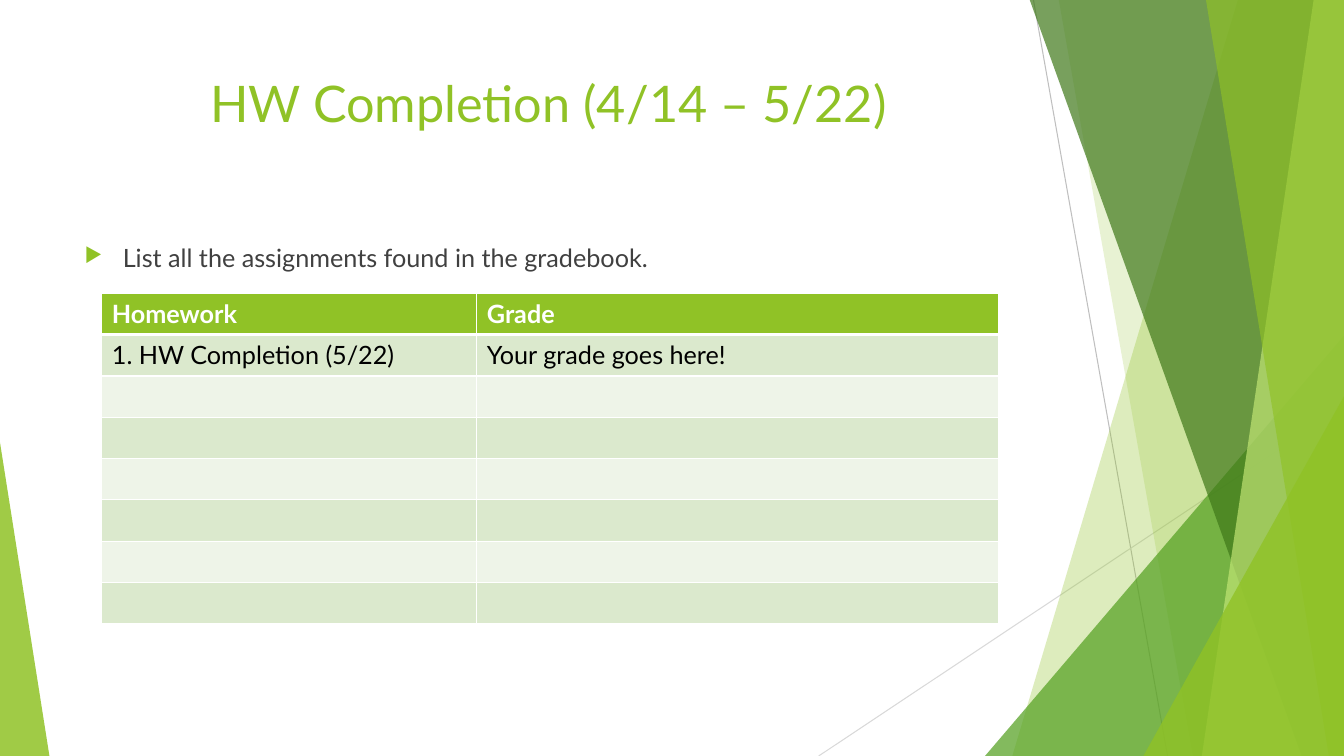
from dataclasses import dataclass

import lxml.etree
import pptx
import pptx.dml.color
import pptx.enum.shapes
import pptx.enum.text
import pptx.oxml.ns
import pptx.util

Inches = pptx.util.Inches
Pt = pptx.util.Pt
RGBColor = pptx.dml.color.RGBColor
qn = pptx.oxml.ns.qn

LIME = RGBColor(0x90, 0xC2, 0x26)
GREEN = RGBColor(0x54, 0xA0, 0x21)
FOREST = RGBColor(0x3F, 0x78, 0x19)
PALE = RGBColor(0xC0, 0xE4, 0x74)
SILVER = RGBColor(0xBF, 0xBF, 0xBF)
MIST = RGBColor(0xD9, 0xD9, 0xD9)
INK = RGBColor(0x40, 0x40, 0x40)
BLACK = RGBColor(0, 0, 0)
WHITE = RGBColor(0xFF, 0xFF, 0xFF)
BANDS = [RGBColor(0xEE, 0xF4, 0xE8), RGBColor(0xDB, 0xE9, 0xCD)]

WIDE, HIGH = 13.33, 7.5
FONT = "Lato"


@dataclass
class Line:
    x1: float
    y1: float
    x2: float
    y2: float
    color: RGBColor


@dataclass
class Shard:
    """A full-height blade from its slanted left edge to the slide's right edge."""
    top: float
    foot: float
    color: RGBColor
    alpha: int


@dataclass
class Wedge:
    """A right triangle standing on the slide's bottom edge."""
    left: float
    width: float
    height: float
    peak: float
    color: RGBColor
    alpha: int


LINES = [
    Line(10.25, 0, 11.58, HIGH, SILVER),
    Line(WIDE, 4.03, 8.12, HIGH, MIST),
]
FACETS = [
    Shard(12.28, 10.04, LIME, 30),
    Shard(10.5, 11.83, LIME, 20),
    Wedge(9.77, 3.56, 4.17, 1, GREEN, 72),
    Shard(10.21, 12.91, FOREST, 70),
    Shard(13.03, 11.92, PALE, 70),
    Shard(11.96, 13.18, LIME, 65),
    Wedge(11.34, 1.99, 3.57, 1, LIME, 80),
    Wedge(0, 0.49, 3.11, 0, LIME, 85),
]
HEAD = ["Homework", "Grade"]
FIRST = ["1. HW Completion (5/22)", "Your grade goes here!"]
ROWS = [HEAD, FIRST] + [["", ""]] * 6
COLS = [3.72, 5.17]
ROW = 0.41


def draw_line(slide, line: Line) -> None:
    link = slide.shapes.add_connector(
        pptx.enum.shapes.MSO_CONNECTOR.STRAIGHT,
        Inches(line.x1), Inches(line.y1), Inches(line.x2), Inches(line.y2))
    link.line.color.rgb = line.color
    link.line.width = Pt(0.75)
    lxml.etree.SubElement(link._element.spPr, qn("a:effectLst"))


def paint(shape, color: RGBColor, alpha: int) -> None:
    shape.shadow.inherit = False
    shape.line.fill.background()
    shape.fill.solid()
    shape.fill.fore_color.rgb = color
    tint = shape._element.spPr.find(qn("a:solidFill"))[0]
    lxml.etree.SubElement(tint, qn("a:alpha"), val=str(alpha * 1000))


def draw_shard(slide, shard: Shard) -> None:
    pen = slide.shapes.build_freeform(
        Inches(shard.top), Inches(-0.01), scale=1.0)
    pen.add_line_segments([
        (Inches(WIDE), Inches(-0.01)),
        (Inches(WIDE), Inches(HIGH)),
        (Inches(shard.foot), Inches(HIGH)),
    ], close=True)
    paint(pen.convert_to_shape(), shard.color, shard.alpha)


def draw_wedge(slide, wedge: Wedge) -> None:
    shape = slide.shapes.add_shape(
        pptx.enum.shapes.MSO_SHAPE.ISOSCELES_TRIANGLE,
        Inches(wedge.left), Inches(HIGH - wedge.height),
        Inches(wedge.width), Inches(wedge.height))
    shape.adjustments[0] = wedge.peak
    paint(shape, wedge.color, wedge.alpha)


def add_run(para, text: str, size: int, color: RGBColor, bold: bool = False) -> None:
    run = para.add_run()
    run.text = text
    run.font.name = FONT
    run.font.size = Pt(size)
    run.font.bold = bold
    run.font.color.rgb = color


def add_box(slide, top: float, height: float):
    box = slide.shapes.add_textbox(
        Inches(0.74), Inches(top), Inches(9.4), Inches(height))
    box.text_frame.word_wrap = True
    box.text_frame.vertical_anchor = pptx.enum.text.MSO_ANCHOR.TOP
    return box.text_frame.paragraphs[0]


def add_bullet(para) -> None:
    props = para._p.get_or_add_pPr()
    props.set("marL", str(Inches(0.38)))
    props.set("indent", str(Inches(-0.38)))
    tint = lxml.etree.SubElement(props, qn("a:buClr"))
    lxml.etree.SubElement(tint, qn("a:srgbClr"), val=str(LIME))
    lxml.etree.SubElement(props, qn("a:buSzPct"), val="80000")
    lxml.etree.SubElement(props, qn("a:buChar"), char="▶")


def add_edge(cell, side: str, width: float) -> None:
    edge = lxml.etree.SubElement(
        cell._tc.get_or_add_tcPr(), qn("a:ln" + side), w=str(Pt(width)))
    fill = lxml.etree.SubElement(edge, qn("a:solidFill"))
    lxml.etree.SubElement(fill, qn("a:srgbClr"), val=str(WHITE))


def draw_table(slide) -> None:
    table = slide.shapes.add_table(
        len(ROWS), len(COLS), Inches(1.01), Inches(2.91),
        Inches(sum(COLS)), Inches(ROW * len(ROWS))).table
    for col, width in zip(table.columns, COLS):
        col.width = Inches(width)
    for r, texts in enumerate(ROWS):
        table.rows[r].height = Inches(ROW)
        for c, text in enumerate(texts):
            cell = table.cell(r, c)
            for side in "LRTB":
                thick = (r, side) in [(0, "B"), (1, "T")]
                add_edge(cell, side, 3 if thick else 1)
            cell.fill.solid()
            cell.fill.fore_color.rgb = BANDS[r % 2] if r else LIME
            if text:
                add_run(cell.text_frame.paragraphs[0], text, 18,
                        BLACK if r else WHITE, r == 0)


def main() -> None:
    deck = pptx.Presentation()
    deck.slide_width, deck.slide_height = Inches(WIDE), Inches(HIGH)
    slide = deck.slides.add_slide(deck.slide_layouts[6])

    # Backdrop of lines and translucent facets
    for line in LINES:
        draw_line(slide, line)
    for facet in FACETS:
        if isinstance(facet, Shard):
            draw_shard(slide, facet)
        else:
            draw_wedge(slide, facet)

    # Title
    title = add_box(slide, 0.67, 1.44)
    title.alignment = pptx.enum.text.PP_ALIGN.CENTER
    add_run(title, "HW Completion (4/14 – 5/22)", 36, LIME)

    # Instruction
    note = add_box(slide, 2.36, 4.24)
    note.space_before = Pt(10)
    add_bullet(note)
    add_run(note, "List all the assignments found in the gradebook.", 18, INK)

    # Homework grades
    draw_table(slide)
    deck.save("out.pptx")


if __name__ == "__main__":
    main()
